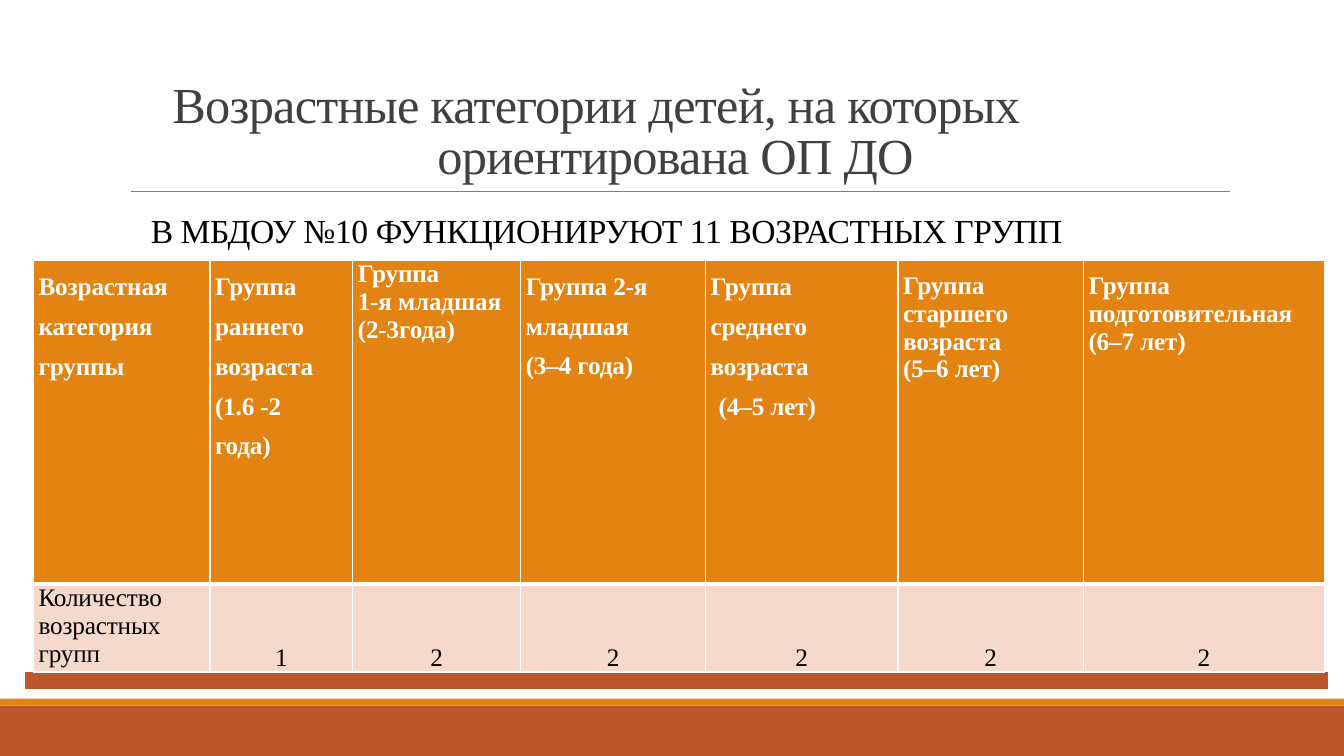
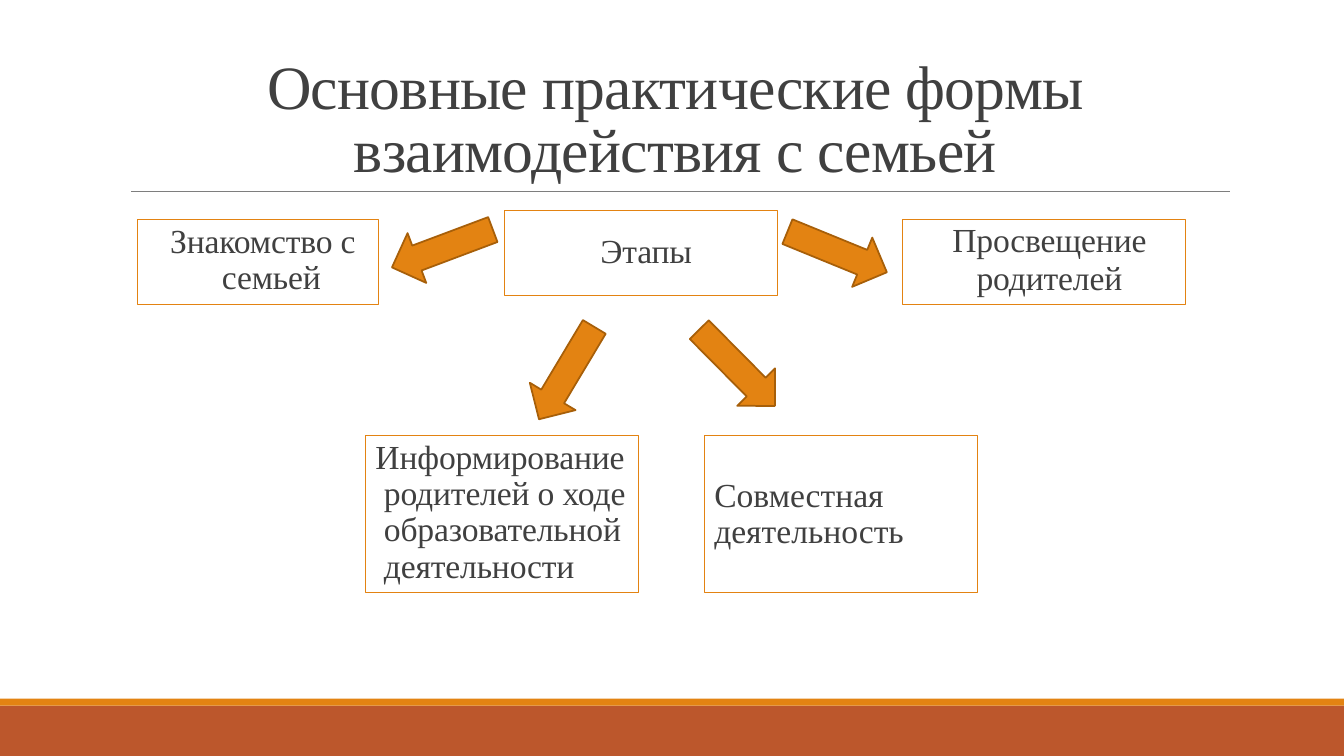
"""Build two slides on age groups and work with families."""
import dataclasses
import math

import lxml.etree
import pptx
import pptx.dml.color
import pptx.enum.shapes
import pptx.enum.text
import pptx.oxml.ns
import pptx.util

Pt = pptx.util.Pt
qn = pptx.oxml.ns.qn
Align = pptx.enum.text.PP_ALIGN
Anchor = pptx.enum.text.MSO_ANCHOR
Shape = pptx.enum.shapes.MSO_SHAPE


@dataclasses.dataclass(frozen=True)
class Theme:
    font: str = "Times New Roman"
    orange: str = "E38312"
    rust: str = "BC572C"
    outline: str = "A75F09"
    rule: str = "7E7E7E"
    pink: str = "F5D9CC"
    ink: str = "404040"
    black: str = "000000"
    white: str = "FFFFFF"
    wide_title_size: float = 36
    large_title_size: float = 44
    body_size: float = 24
    table_size: float = 18
    plain_table: str = "{2D5ABB26-0587-4C30-8999-92F81FD0307C}"


def rgb(color):
    return pptx.dml.color.RGBColor.from_string(color)


class Deck:
    def __init__(self, theme):
        self.theme = theme
        self.deck = pptx.Presentation()
        self.deck.slide_width, self.deck.slide_height = Pt(960), Pt(540)
        self.page = None

    def add_page(self, title, place, **style):
        self.page = self.deck.slides.add_slide(self.deck.slide_layouts[5])
        self.shape(Shape.RECTANGLE, (0, 504, 960, 36), self.theme.rust)
        self.shape(Shape.RECTANGLE, (0, 499, 960, 5), self.theme.orange)
        self.rule(93.6, 878.4, 136.8)
        box = self.page.shapes.title
        box.left, box.top, box.width, box.height = map(Pt, place)
        self.set_text(box.text_frame, [title], spacing=-0.55, **style)

    def rule(self, start, end, height):
        line = self.page.shapes.add_connector(
            pptx.enum.shapes.MSO_CONNECTOR.STRAIGHT,
            Pt(start), Pt(height), Pt(end), Pt(height))
        line.line.color.rgb = rgb(self.theme.rule)
        line.line.width = Pt(0.5)
        lxml.etree.SubElement(line._element.spPr, qn("a:effectLst"))

    def shape(self, kind, place, fill=None, outline=None, weight=0.75):
        shape = self.page.shapes.add_shape(kind, *map(Pt, place))
        shape.shadow.inherit = False
        if fill:
            shape.fill.solid()
            shape.fill.fore_color.rgb = rgb(fill)
        else:
            shape.fill.background()
        if outline:
            shape.line.color.rgb = rgb(outline)
            shape.line.width = Pt(weight)
        else:
            shape.line.fill.background()
        return shape

    def arrow(self, tail, tip, breadth=38):
        length = math.dist(tail, tip)
        left = (tail[0] + tip[0] - length) / 2
        top = (tail[1] + tip[1] - breadth) / 2
        arrow = self.shape(Shape.RIGHT_ARROW, (left, top, length, breadth),
                           self.theme.orange, self.theme.outline, 1.25)
        arrow.rotation = math.degrees(
            math.atan2(tip[1] - tail[1], tip[0] - tail[0]))

    def label(self, place, paragraphs, **style):
        box = self.shape(Shape.RECTANGLE, place, outline=self.theme.orange)
        self.set_text(box.text_frame, paragraphs, **style)

    def caption(self, place, text):
        box = self.page.shapes.add_textbox(*map(Pt, place))
        self.set_text(box.text_frame, [text], color=self.theme.black,
                      align=Align.CENTER, spacing=-0.3)

    def set_text(self, frame, paragraphs, top=0, **style):
        frame.word_wrap = True
        frame.auto_size = pptx.enum.text.MSO_AUTO_SIZE.NONE
        frame.vertical_anchor = Anchor.TOP
        frame.margin_left = frame.margin_right = frame.margin_bottom = 0
        frame.margin_top = Pt(top)
        self.fill_text(frame, paragraphs, **style)

    def fill_text(self, frame, paragraphs, size=None, color=None, bold=False,
                  align=Align.LEFT, leading=None, rest=None, left=0, first=0,
                  last_left=None, spacing=-0.1):
        for index, text in enumerate(paragraphs):
            para = frame.add_paragraph() if index else frame.paragraphs[0]
            para.text = text
            para.alignment = align
            para.space_before = para.space_after = Pt(0)
            pitch = rest if index else leading
            para.line_spacing = Pt(pitch) if pitch and pitch > 1 else pitch or 1.0
            para.font.name = self.theme.font
            para.font.size = Pt(size or self.theme.body_size)
            para.font.bold = bold
            para.font.color.rgb = rgb(color or self.theme.ink)
            is_last = index == len(paragraphs) - 1
            indent = last_left if is_last and last_left else left
            properties = para._p.get_or_add_pPr()
            properties.set("marL", str(Pt(indent)))
            properties.set("indent", str(Pt(first)))
            for span in para.runs:
                span._r.get_or_add_rPr().set("spc", str(round(spacing * 100)))

    def border(self, cell, top=1, bottom=1):
        properties = cell._tc.get_or_add_tcPr()
        for side, weight in (("L", 1), ("R", 1), ("T", top), ("B", bottom)):
            line = lxml.etree.SubElement(
                properties, qn("a:ln" + side), w=str(Pt(weight)))
            fill = lxml.etree.SubElement(line, qn("a:solidFill"))
            lxml.etree.SubElement(fill, qn("a:srgbClr"), val=self.theme.white)

    def table(self, place, widths, heights, headers, counts):
        theme = self.theme
        table = self.page.shapes.add_table(
            len(heights), len(widths), *map(Pt, place)).table
        table.first_row = table.horz_banding = False
        table._tbl.tblPr.find(qn("a:tableStyleId")).text = theme.plain_table
        for column, width in zip(table.columns, widths):
            column.width = Pt(width)
        for row, height in zip(table.rows, heights):
            row.height = Pt(height)
        for cell in table.iter_cells():
            cell.margin_left = cell.margin_right = 0
            cell.margin_top = cell.margin_bottom = 0
        for index, (paragraphs, style) in enumerate(headers, 1):
            cell = table.cell(0, index)
            self.border(cell, bottom=3)
            self.paint(cell, theme.orange)
            self.fill_text(cell.text_frame, paragraphs, size=theme.table_size,
                           color=theme.white, bold=True, left=3.6, **style)
        for index, text in enumerate(counts, 1):
            cell = table.cell(1, index)
            self.border(cell, top=3)
            self.paint(cell, theme.pink)
            is_count = index > 1
            cell.vertical_anchor = Anchor.BOTTOM if is_count else Anchor.TOP
            self.fill_text(cell.text_frame, [text], size=theme.table_size,
                           color=theme.black, left=0 if is_count else 3.6,
                           align=Align.CENTER if is_count else Align.LEFT)
        for index in range(len(widths)):
            self.paint(table.cell(2, index), theme.rust)
        for cell in table.iter_cells():
            if not cell.text_frame.text:
                lxml.etree.SubElement(cell.text_frame.paragraphs[0]._p,
                                      qn("a:endParaRPr"), sz="800")

    def paint(self, cell, color):
        cell.fill.solid()
        cell.fill.fore_color.rgb = rgb(color)


def add_age_groups(deck):
    deck.add_page("Возрастные категории детей, на которых\vориентирована ОП ДО",
                  (121.7, 51, 722, 82), size=deck.theme.wide_title_size,
                  leading=36.7, left=190.8, first=-189.4, top=7.6)
    deck.caption((95.8, 150, 674.6, 30),
                 "В МБДОУ №10 ФУНКЦИОНИРУЮТ 11 ВОЗРАСТНЫХ ГРУПП")
    loose = {"leading": 28.8, "rest": 27.9}
    mixed = {"leading": 28}
    headers = [
        (["Возрастная\vкатегория\vгруппы"], loose),
        (["Группа\vраннего\vвозраста", "(1.6 -2\vгода)"], loose),
        (["Группа", "1-я младшая", "(2-3года)"], {}),
        (["Группа 2-я\vмладшая", "(3–4 года)"], loose),
        (["Группа\vсреднего\vвозраста", "(4–5 лет)"], {**loose, "last_left": 9.4}),
        (["Группа", "старшего\vвозраста", "(5–6 лет)"], mixed),
        (["Группа", "подготовительная", "(6–7 лет)"], mixed),
    ]
    counts = ["Количество\vвозрастных\vгрупп", "1"] + ["2"] * 5
    deck.table((18, 186, 930, 306),
               (6, 126, 102, 120, 132, 137.5, 132.5, 172, 2),
               (231, 63, 12), headers, counts)


def add_family_work(deck):
    deck.add_page("Основные практические формы\vвзаимодействия с семьей",
                  (133.9, 33, 692, 100), size=deck.theme.large_title_size,
                  leading=44.9, left=118.8, first=-61.9, top=9.4)
    deck.label((360.5, 150.5, 195, 60.5), ["Этапы"], left=68.4, top=13.5)
    deck.label((98.6, 157, 172, 60.5), ["Знакомство с\vсемьей"],
               left=60, first=-37, leading=25.9, top=3)
    deck.label((645, 157, 202, 60.5), ["Просвещение", "родителей"],
               left=7.2, leading=27.4, rest=27.4, align=Align.CENTER, top=0.5)
    deck.label((261, 311, 195, 112.5),
               ["Информирование\vродителей о ходе\vобразовательной\vдеятельности"],
               left=13.2, first=-6, leading=0.9, top=3.5)
    deck.label((503, 311, 195, 112.5), ["Совместная\vдеятельность"],
               left=7.2, leading=25.9, top=30.5, spacing=0)
    for tail, tip in (((352, 164), (280, 191)),
                      ((424.5, 233.5), (385, 299.5)),
                      ((562.5, 165.5), (633.5, 194.5)),
                      ((499.5, 235.5), (553.5, 290))):
        deck.arrow(tail, tip)


def main():
    deck = Deck(Theme())
    add_age_groups(deck)
    add_family_work(deck)
    deck.deck.save("out.pptx")


if __name__ == "__main__":
    main()
